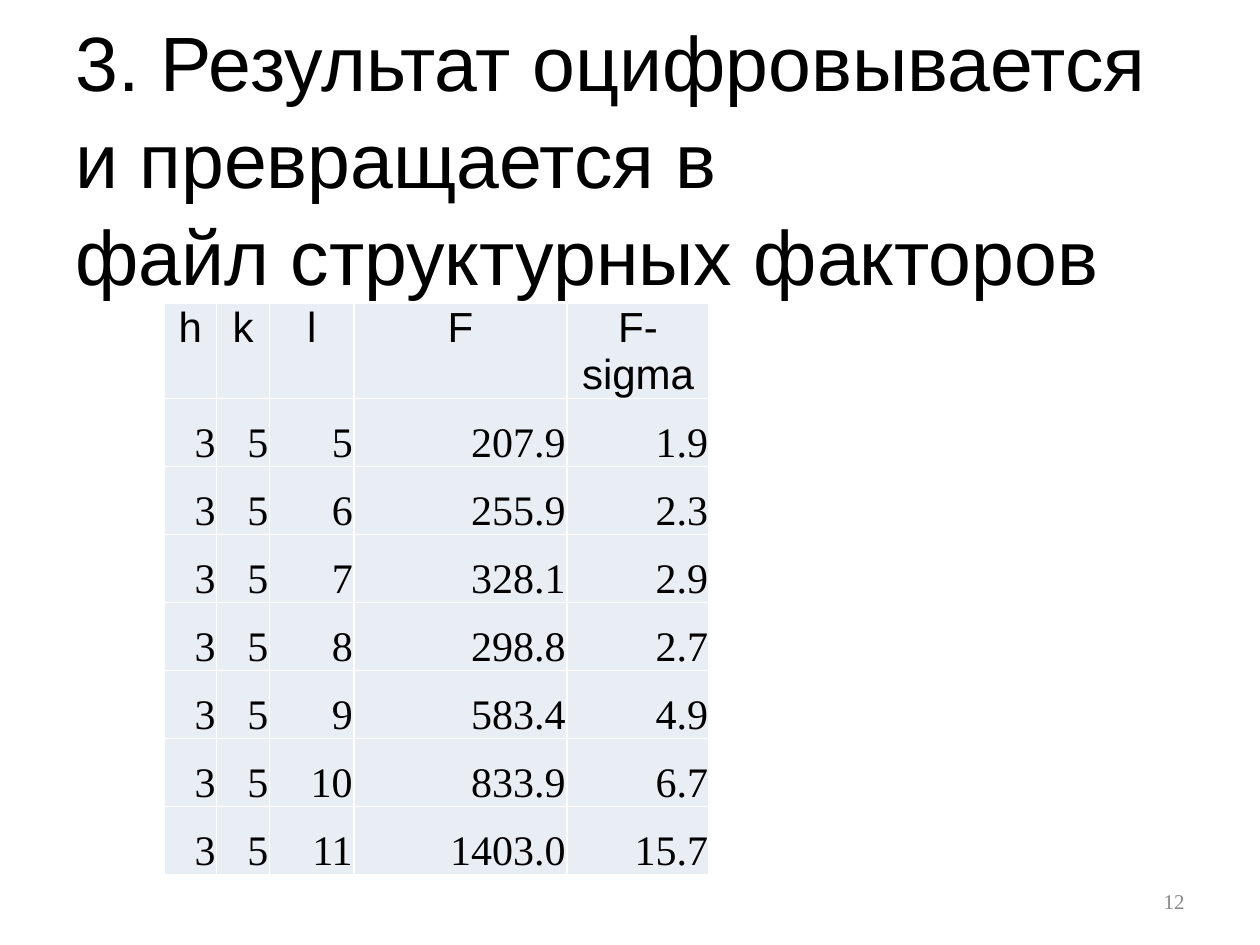
from lxml import etree
from pptx import Presentation
from pptx.dml.color import RGBColor
from pptx.enum.text import MSO_ANCHOR, PP_ALIGN
from pptx.oxml.ns import qn
from pptx.util import Inches, Pt

TITLE = ["3. Результат оцифровывается и превращается в ", "файл структурных факторов"]
HEADERS = ["h", "k", "l", "F", "F-sigma"]
REFLECTIONS = [
    (3, 5, 5, 207.9, 1.9),
    (3, 5, 6, 255.9, 2.3),
    (3, 5, 7, 328.1, 2.9),
    (3, 5, 8, 298.8, 2.7),
    (3, 5, 9, 583.4, 4.9),
    (3, 5, 10, 833.9, 6.7),
    (3, 5, 11, 1403.0, 15.7),
]
COLUMN_WIDTHS = [0.42, 0.42, 0.67, 1.69, 1.13]
ROW_HEIGHT = 0.54
PAGE_NUMBER = "12"

BLACK = RGBColor(0x00, 0x00, 0x00)
GRAY = RGBColor(0x89, 0x89, 0x89)
WHITE = RGBColor(0xFF, 0xFF, 0xFF)
PALE_BLUE = RGBColor(0xE9, 0xED, 0xF4)
SANS, SERIF = "Arial", "Times New Roman"
LEFT, CENTER, RIGHT = PP_ALIGN.LEFT, PP_ALIGN.CENTER, PP_ALIGN.RIGHT
TOP, MIDDLE, BOTTOM = MSO_ANCHOR.TOP, MSO_ANCHOR.MIDDLE, MSO_ANCHOR.BOTTOM


def write(frame, lines, size, font, color, align):
    para = frame.paragraphs[0]
    para.alignment = align
    for index, line in enumerate(lines):
        if index:
            para.add_line_break()
        span = para.add_run()
        span.text = line
        span.font.size = Pt(size)
        span.font.name = font
        span.font.bold = False
        span.font.color.rgb = color
    return para


def add_text(page, place, lines, size, font, color, align):
    box = page.shapes.add_textbox(*map(Inches, place))
    frame = box.text_frame
    frame.word_wrap = True
    frame.vertical_anchor = MIDDLE
    return write(frame, lines, size, font, color, align)


def add_borders(cell):
    properties = cell._tc.get_or_add_tcPr()
    for index, side in enumerate(("lnL", "lnR", "lnT", "lnB")):
        line = etree.Element(qn(f"a:{side}"), w=str(Pt(1)))
        fill = etree.SubElement(line, qn("a:solidFill"))
        etree.SubElement(fill, qn("a:srgbClr"), val=str(WHITE))
        properties.insert(index, line)


def fill_cell(cell, text, font, align, anchor):
    cell.margin_left = cell.margin_right = cell.margin_top = Inches(0.01)
    cell.margin_bottom = 0
    cell.vertical_anchor = anchor
    cell.fill.solid()
    cell.fill.fore_color.rgb = PALE_BLUE
    add_borders(cell)
    write(cell.text_frame, [text], 24, font, BLACK, align)


def add_reflection_table(page):
    rows = [HEADERS, *REFLECTIONS]
    table = page.shapes.add_table(
        len(rows), len(HEADERS), Inches(1.3), Inches(2.41),
        Inches(sum(COLUMN_WIDTHS)), Inches(ROW_HEIGHT * len(rows)),
    ).table
    table.first_row = table.horz_banding = False
    for column, width in zip(table.columns, COLUMN_WIDTHS):
        column.width = Inches(width)
    for row_index, values in enumerate(rows):
        style = (SERIF, RIGHT, BOTTOM) if row_index else (SANS, CENTER, TOP)
        for column_index, value in enumerate(values):
            fill_cell(table.cell(row_index, column_index), str(value), *style)


def main():
    deck = Presentation()
    deck.slide_width, deck.slide_height = Inches(10), Inches(7.5)
    page = deck.slides.add_slide(deck.slide_layouts[6])
    add_reflection_table(page)
    title = add_text(page, (0.5, 0.3, 9.15, 1.87), TITLE, 44, SANS, BLACK, LEFT)
    title.line_spacing = 1.05
    add_text(page, (7.17, 6.95, 2.33, 0.4), [PAGE_NUMBER], 12, SERIF, GRAY, RIGHT)
    deck.save("out.pptx")


if __name__ == "__main__":
    main()
